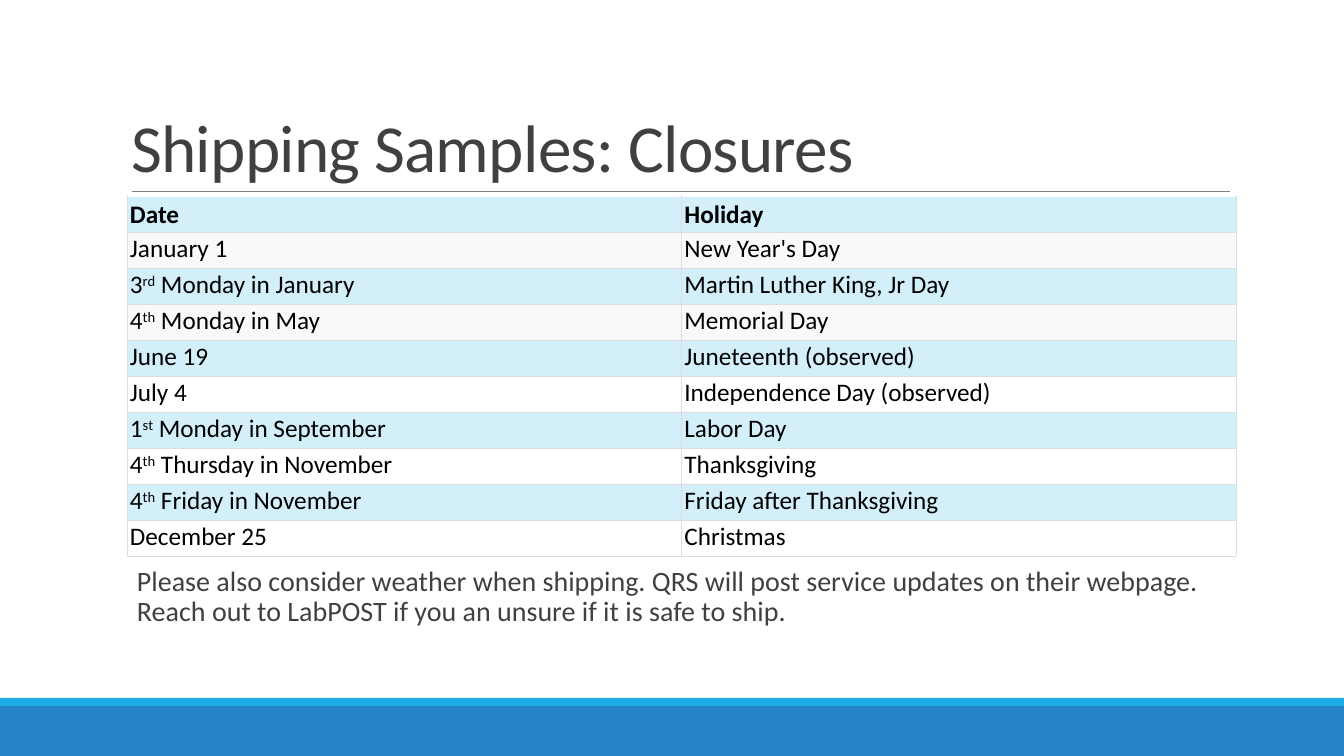
"""Build the slide listing the holidays on which sample shipping is closed."""
from lxml.etree import SubElement
from pptx import Presentation
from pptx.dml.color import RGBColor
from pptx.enum.shapes import MSO_CONNECTOR, MSO_SHAPE
from pptx.enum.text import MSO_ANCHOR, MSO_AUTO_SIZE, PP_ALIGN
from pptx.oxml.ns import qn
from pptx.util import Emu, Pt


def px(count):
    return Emu(round(count * 914400 / 100.8))


def color(code):
    return RGBColor.from_string(code)


deck = Presentation()
deck.slide_width, deck.slide_height = px(1344), px(756)
page = deck.slides.add_slide(deck.slide_layouts[1])
title, body = page.placeholders

for top, height, fill in [(706, 50, "2683C6"), (698, 8, "1CADE4")]:
    band = page.shapes.add_shape(MSO_SHAPE.RECTANGLE, 0, px(top), px(1344), px(height))
    band.shadow.inherit = False
    band.fill.solid()
    band.fill.fore_color.rgb = color(fill)
    band.line.fill.background()

rule = page.shapes.add_connector(MSO_CONNECTOR.STRAIGHT, px(132), px(191), px(1230), px(191))
rule.line.color.rgb = color("808080")
rule.line.width = Pt(0.5)
SubElement(rule._element.spPr, qn("a:effectLst"))

notice = (
    "Please also consider weather when shipping. QRS will post service updates on "
    "their webpage. Reach out to LabPOST if you an unsure if it is safe to ship."
)
for box, place, anchor, text, size, spacing in [
    (title, (121, 31, 1109, 160), MSO_ANCHOR.BOTTOM, "Shipping Samples: Closures", 48, 0.85),
    (body, (127, 562, 1097, 103), MSO_ANCHOR.TOP, notice, 20, 0.9),
]:
    box.left, box.top, box.width, box.height = map(px, place)
    frame = box.text_frame
    frame.word_wrap = True
    frame.auto_size = MSO_AUTO_SIZE.NONE
    frame.vertical_anchor = anchor
    para = frame.paragraphs[0]
    para.alignment = PP_ALIGN.LEFT
    para.line_spacing = spacing
    span = para.add_run()
    span.text = text
    span.font.name = "Calibri"
    span.font.size = Pt(size)
    span.font.color.rgb = color("404040")

title.text_frame.paragraphs[0].runs[0]._r.get_or_add_rPr().set("spc", "-50")

body.text_frame.margin_left = body.text_frame.margin_right = 0
notice_para = body.text_frame.paragraphs[0]
notice_para.space_before = Pt(12)
notice_para.space_after = Pt(2)
properties = notice_para._p.get_or_add_pPr()
properties.set("marL", str(px(10)))
properties.set("indent", str(-px(10)))
bullet_color = SubElement(properties, qn("a:buClr"))
SubElement(bullet_color, qn("a:srgbClr"), val="1CADE4")
SubElement(properties, qn("a:buChar"), char=" ")

closures = [
    (["Date"], "Holiday", "D2EFFA"),
    (["January 1"], "New Year's Day", "F9F9F9"),
    (["3", "rd", " Monday in January"], "Martin Luther King, Jr Day", "D2EFFA"),
    (["4", "th", " Monday in May"], "Memorial Day", "F9F9F9"),
    (["June 19"], "Juneteenth (observed)", "D2EFFA"),
    (["July 4"], "Independence Day (observed)", "FFFFFF"),
    (["1", "st", " Monday in September"], "Labor Day", "D2EFFA"),
    (["4", "th", " Thursday in November"], "Thanksgiving", "FFFFFF"),
    (["4", "th", " Friday in November"], "Friday after Thanksgiving", "D2EFFA"),
    (["December 25"], "Christmas", "FFFFFF"),
]
table = page.shapes.add_table(
    len(closures), 2, px(127), px(196), px(1109), px(36 * len(closures))
).table
table.first_row = table.horz_banding = False

for row, (date, holiday, fill) in enumerate(closures):
    for column, pieces in enumerate([date, [holiday]]):
        cell = table.cell(row, column)
        cell.margin_left = cell.margin_right = px(3)
        cell.margin_top = cell.margin_bottom = px(2)
        cell.vertical_anchor = MSO_ANCHOR.TOP if row else MSO_ANCHOR.BOTTOM
        for side in ["lnL", "lnR", "lnT", "lnB"] if row else ["lnL", "lnR", "lnB"]:
            border = SubElement(cell._tc.get_or_add_tcPr(), qn(f"a:{side}"), w=str(Pt(0.38)))
            border_fill = SubElement(border, qn("a:solidFill"))
            SubElement(border_fill, qn("a:srgbClr"), val="DDDDDD")
        cell.fill.solid()
        cell.fill.fore_color.rgb = color(fill)
        para = cell.text_frame.paragraphs[0]
        for position, piece in enumerate(pieces):
            span = para.add_run()
            span.text = piece
            span.font.name = "Calibri"
            span.font.size = Pt(18)
            span.font.bold = row == 0
            span.font.color.rgb = color("000000")
            if position == 1:
                span._r.get_or_add_rPr().set("baseline", "30000")

deck.save("out.pptx")
